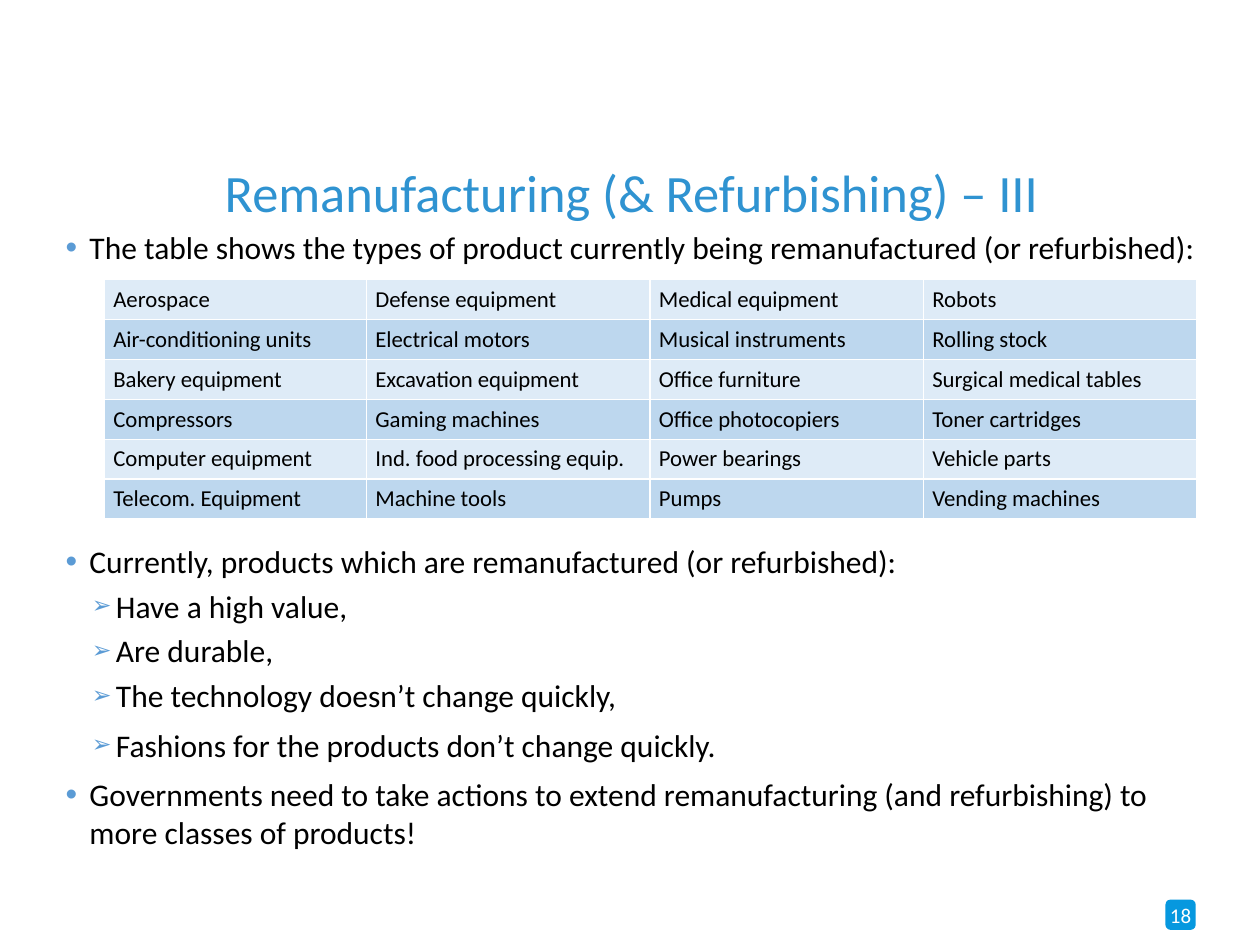
import pptx
import pptx.dml.color
import pptx.enum.shapes
import pptx.enum.text
import pptx.oxml
import pptx.oxml.ns
import pptx.util

Inches = pptx.util.Inches
Pt = pptx.util.Pt
PP_ALIGN = pptx.enum.text.PP_ALIGN
MIDDLE = pptx.enum.text.MSO_ANCHOR.MIDDLE

COLORS = {
    "title": "2F93D1",
    "text": "000000",
    "bullet": "5B9BD5",
    "badge": "0698DF",
    "white": "FFFFFF",
    "light_row": "DEEBF7",
    "dark_row": "BDD7EE",
}

PRODUCTS = [
    ["Aerospace", "Defense equipment", "Medical equipment", "Robots"],
    ["Air-conditioning units", "Electrical motors", "Musical instruments", "Rolling stock"],
    ["Bakery equipment", "Excavation equipment", "Office furniture", "Surgical medical tables"],
    ["Compressors", "Gaming machines", "Office photocopiers", "Toner cartridges"],
    ["Computer equipment", "Ind. food processing equip.", "Power bearings", "Vehicle parts"],
    ["Telecom. Equipment", "Machine tools", "Pumps", "Vending machines"],
]

INTRO = [("The table shows the types of product currently being remanufactured (or refurbished):", 0, 0, 3)]

CONCLUSIONS = [
    ("Currently, products which are remanufactured (or refurbished):", 0, 0, 2),
    ("Have a high value,", 1, 2, 2),
    ("Are durable,", 1, 2, 2),
    ("The technology doesn’t change quickly,", 1, 2, 2),
    ("Fashions for the products don’t change quickly.", 1, 4.5, 4.5),
    ("Governments need to take actions to extend remanufacturing (and refurbishing) to "
     "more classes of products!", 0, 2, 4.5),
]


def rgb(name):
    return pptx.dml.color.RGBColor.from_string(COLORS[name])


def add_xml(parent, xml):
    ns = pptx.oxml.ns.nsdecls("a")
    parent.append(pptx.oxml.parse_xml(xml.replace(">", f" {ns}>", 1)))


def write(p, text, size=18, color="text", align=PP_ALIGN.LEFT, before=0, after=0, spacing=1.0):
    p.alignment = align
    p.space_before, p.space_after = Pt(before), Pt(after)
    p.line_spacing = spacing
    r = p.add_run()
    r.text = text
    r.font.name = SlideBuilder.font
    r.font.size = Pt(size)
    r.font.color.rgb = rgb(color)


class SlideBuilder:
    font = "Calibri"
    bullets = [("•", 105, 0.19), ("➢", 75, 0.4)]
    hanging = 0.19

    def __init__(self, prs):
        self.slide = prs.slides.add_slide(prs.slide_layouts[3])

    def place(self, idx, x, y, w, h):
        sp = self.slide.placeholders[idx]
        sp.left, sp.top, sp.width, sp.height = Inches(x), Inches(y), Inches(w), Inches(h)
        tf = sp.text_frame
        tf.word_wrap = True
        tf.auto_size = pptx.enum.text.MSO_AUTO_SIZE.NONE
        return tf

    def title(self, text, *box):
        tf = self.place(0, *box)
        tf.vertical_anchor = MIDDLE
        write(tf.paragraphs[0], text, size=30, color="title", align=PP_ALIGN.CENTER, spacing=0.9)

    def bullet_list(self, idx, items, *box):
        tf = self.place(idx, *box)
        for i, (text, level, before, after) in enumerate(items):
            p = tf.add_paragraph() if i else tf.paragraphs[0]
            p.level = level
            char, percent, indent = self.bullets[level]
            pPr = p._p.get_or_add_pPr()
            pPr.set("marL", str(Inches(indent)))
            pPr.set("indent", str(-Inches(self.hanging)))
            add_xml(pPr, f'<a:buClr><a:srgbClr val="{COLORS["bullet"]}"/></a:buClr>')
            add_xml(pPr, f'<a:buSzPct val="{percent * 1000}"></a:buSzPct>')
            add_xml(pPr, f'<a:buChar char="{char}"></a:buChar>')
            write(p, text, before=before, after=after)

    def table(self, rows, x, y, col_widths, height):
        frame = self.slide.shapes.add_table(
            len(rows), len(col_widths), Inches(x), Inches(y), Inches(sum(col_widths)), Inches(height))
        table = frame.table
        for column, width in zip(table.columns, col_widths):
            column.width = Inches(width)
        for i, values in enumerate(rows):
            table.rows[i].height = Inches(height / len(rows))
            for j, text in enumerate(values):
                self.cell(table.cell(i, j), text, "dark_row" if i % 2 else "light_row")

    def cell(self, cell, text, fill):
        cell.vertical_anchor = MIDDLE
        cell.margin_left = cell.margin_right = Inches(0.07)
        cell.margin_top = cell.margin_bottom = Inches(0.04)
        write(cell.text_frame.paragraphs[0], text, size=13)
        tcPr = cell._tc.get_or_add_tcPr()
        for side in ("lnL", "lnR", "lnT", "lnB"):
            add_xml(tcPr, f'<a:{side} w="{Pt(1)}"><a:solidFill><a:srgbClr val="{COLORS["white"]}"/>'
                          f'</a:solidFill></a:{side}>')
        cell.fill.solid()
        cell.fill.fore_color.rgb = rgb(fill)

    def page_badge(self, number, x, y, size):
        sp = self.slide.shapes.add_shape(
            pptx.enum.shapes.MSO_SHAPE.ROUNDED_RECTANGLE, Inches(x), Inches(y), Inches(size), Inches(size))
        sp.shadow.inherit = False
        sp.fill.solid()
        sp.fill.fore_color.rgb = rgb("badge")
        sp.line.fill.background()
        tf = sp.text_frame
        tf.margin_left = tf.margin_right = tf.margin_top = tf.margin_bottom = 0
        tf.vertical_anchor = MIDDLE
        write(tf.paragraphs[0], number, size=12, color="white", align=PP_ALIGN.CENTER)


def main():
    prs = pptx.Presentation()
    prs.slide_width, prs.slide_height = Inches(10), Inches(7.5)
    s = SlideBuilder(prs)
    s.page_badge("18", 9.25, 7.14, 0.24)
    s.title("Remanufacturing (& Refurbishing) – III", 0.03, 1.18, 9.97, 0.74)
    s.bullet_list(1, INTRO, 0.42, 1.76, 9.38, 0.57)
    s.bullet_list(2, CONCLUSIONS, 0.42, 4.25, 9.38, 2.58)
    s.table(PRODUCTS, 0.83, 2.22, [2.08, 2.25, 2.17, 2.17], 1.9)
    prs.save("out.pptx")


if __name__ == "__main__":
    main()
